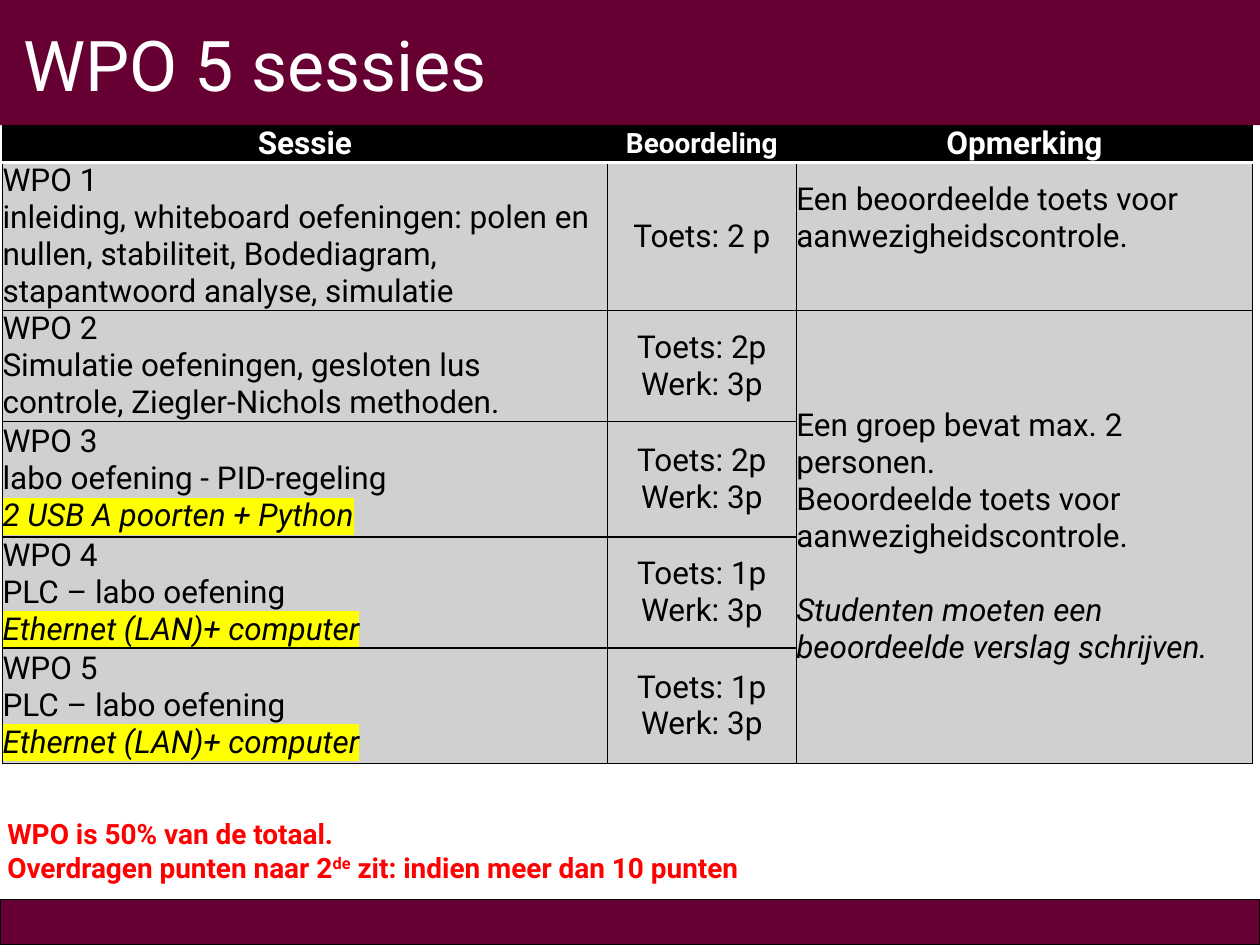
import pptx
import pptx.util
import pptx.dml.color
import pptx.enum.shapes
import pptx.enum.text
from lxml import etree

Pt = pptx.util.Pt
ALIGN = pptx.enum.text.PP_ALIGN
ANCHOR = pptx.enum.text.MSO_ANCHOR
COLORS = {"wine": "660033", "black": "000000", "white": "FFFFFF",
          "gray": "D0D0D0", "red": "FF0000", "yellow": "FFFF00"}
FONT = "Roboto"
NS = "http://schemas.openxmlformats.org/drawingml/2006/main"


def rgb(name):
    return pptx.dml.color.RGBColor.from_string(COLORS[name])


def format_runs(para, size, color, bold=False, italic=False):
    for span in para.runs:
        span.font.name = FONT
        span.font.size = Pt(size)
        span.font.bold = bold
        span.font.italic = italic
        span.font.color.rgb = rgb(color)


deck = pptx.Presentation()
deck.slide_width, deck.slide_height = Pt(720), Pt(540)
page = deck.slides.add_slide(deck.slide_layouts[5])

# Top and bottom bars
for top, height, outlined in ((0, 71.5, False), (514, 26, True)):
    bar = page.shapes.add_shape(pptx.enum.shapes.MSO_SHAPE.RECTANGLE,
                                0, Pt(top), Pt(720), Pt(height))
    bar.shadow.inherit = False
    bar.fill.solid()
    bar.fill.fore_color.rgb = rgb("wine")
    if outlined:
        bar.line.color.rgb = rgb("black")
        bar.line.width = Pt(0.75)
    else:
        bar.line.fill.background()

# Title, brought in front of the bars
title = page.shapes.title
title.element.getparent().append(title.element)
title.left, title.top, title.width, title.height = Pt(6), Pt(9.36), Pt(705), Pt(54.7)
title.text_frame.text = "WPO 5 sessies"
title.text_frame.auto_size = pptx.enum.text.MSO_AUTO_SIZE.NONE
title.text_frame.vertical_anchor = ANCHOR.BOTTOM
title.text_frame.paragraphs[0].alignment = ALIGN.LEFT
format_runs(title.text_frame.paragraphs[0], 40, "white")

# Sessions table: a leading * marks italic text, the first column's is highlighted
rows = [
    ("Sessie", "Beoordeling", "Opmerking"),
    ("WPO 1\ninleiding, whiteboard oefeningen: polen en nullen, stabiliteit, "
     "Bodediagram, stapantwoord analyse, simulatie",
     "Toets: 2 p", "Een beoordeelde toets voor aanwezigheidscontrole."),
    ("WPO 2\nSimulatie oefeningen, gesloten lus controle, Ziegler-Nichols methoden.",
     "Toets: 2p\nWerk: 3p",
     "Een groep bevat max. 2 personen.\nBeoordeelde toets voor aanwezigheidscontrole.\n"
     "*Studenten moeten een beoordeelde verslag schrijven."),
    ("WPO 3\nlabo oefening - PID-regeling\n*2 USB A poorten + Python",
     "Toets: 2p\nWerk: 3p", ""),
    ("WPO 4\nPLC – labo oefening\n*Ethernet (LAN)+ computer", "Toets: 1p\nWerk: 3p", ""),
    ("WPO 5\nPLC – labo oefening\n*Ethernet (LAN)+ computer", "Toets: 1p\nWerk: 3p", ""),
]
widths = (345.6, 108, 260.8)
heights = (21, 84.5, 63.5, 66, 63.5, 66)
frame = page.shapes.add_table(len(rows), len(widths), Pt(1.44), Pt(71.7),
                              Pt(sum(widths)), Pt(sum(heights)))
table = frame.table
table.first_row = table.horz_banding = False
for column, width in zip(table.columns, widths):
    column.width = Pt(width)
for row, height in zip(table.rows, heights):
    row.height = Pt(height)
table.cell(2, 2).merge(table.cell(5, 2))

for r, texts in enumerate(rows):
    header = r == 0
    for c, text in enumerate(texts):
        cell = table.cell(r, c)
        cell.margin_left = cell.margin_right = cell.margin_top = cell.margin_bottom = 0
        cell.vertical_anchor = ANCHOR.MIDDLE

        properties = cell._tc.get_or_add_tcPr()
        for side in "LRTB":
            divider = (header and side == "B") or (r == 1 and side == "T")
            border = etree.SubElement(properties, f"{{{NS}}}ln{side}",
                                      w=str(Pt(2 if divider else 0.75)))
            fill = etree.SubElement(border, f"{{{NS}}}solidFill")
            etree.SubElement(fill, f"{{{NS}}}srgbClr",
                             val=COLORS["white" if divider else "black"])
        cell.fill.solid()
        cell.fill.fore_color.rgb = rgb("black" if header else "gray")
        if not text:
            continue

        cell.text_frame.text = text.replace("*", "")
        for para, line in zip(cell.text_frame.paragraphs, text.split("\n")):
            italic = line.startswith("*")
            para.alignment = ALIGN.CENTER if header or c == 1 else ALIGN.LEFT
            format_runs(para, 16 if header and c == 1 else 18,
                        "white" if header else "black", header, italic)
            if italic and c == 0:
                highlight = etree.Element(f"{{{NS}}}highlight")
                etree.SubElement(highlight, f"{{{NS}}}srgbClr", val=COLORS["yellow"])
                para.runs[0].font._element.find(f"{{{NS}}}solidFill").addnext(highlight)
            elif italic:
                para.space_before = Pt(21)
table.cell(1, 2).margin_bottom = Pt(21)

# Grading note
note = page.shapes.add_textbox(Pt(-2.88), Pt(463), Pt(680), Pt(46))
note.text_frame.word_wrap = True
note.text_frame.text = "WPO is 50% van de totaal."
para = note.text_frame.add_paragraph()
for text in ("Overdragen punten naar 2", "de", " zit: indien meer dan 10 punten"):
    para.add_run().text = text
for para in note.text_frame.paragraphs:
    format_runs(para, 16, "red", bold=True)
para.runs[1].font._element.set("baseline", "30000")

deck.save("out.pptx")
